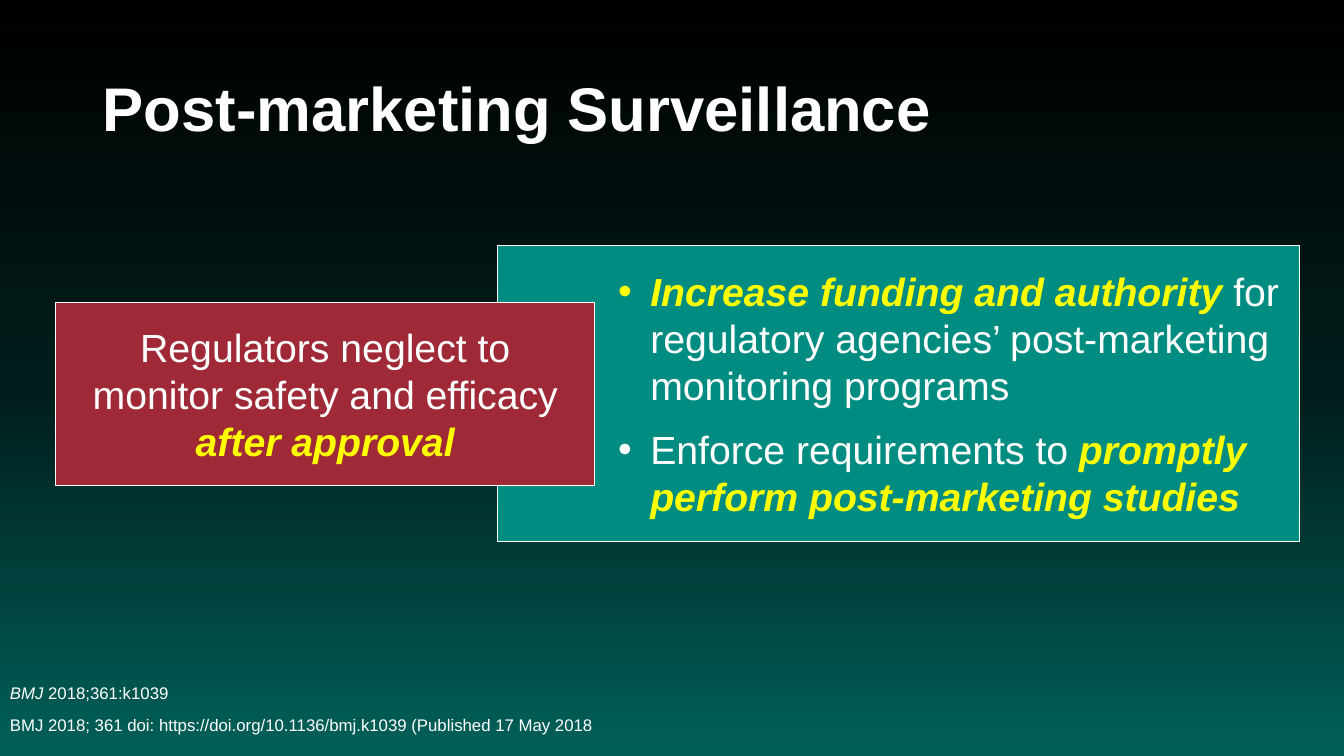
from copy import deepcopy

from lxml.etree import SubElement
from pptx import Presentation
from pptx.dml.color import RGBColor
from pptx.enum.shapes import MSO_SHAPE
from pptx.enum.text import MSO_ANCHOR, PP_ALIGN
from pptx.oxml.ns import qn
from pptx.util import Inches, Pt

COLORS = {"white": "FFFFFF", "yellow": "FFFF00", "teal": "008C81", "red": "9F2936"}
GRADIENT = [(0, "000000"), (0.52, "001E1C"), (1, "006059")]
FONT = "Arial"
STRONG = {"color": "yellow", "bold": True, "italic": True}


def rgb(name):
    return RGBColor.from_string(COLORS[name])


def set_background(s):
    fill = s.background.fill
    fill.gradient()
    fill.gradient_angle = 270
    stop_list = next(s.element.iter(qn("a:gsLst")))
    stop_list.append(deepcopy(stop_list[-1]))
    for stop, (position, color) in zip(fill.gradient_stops, GRADIENT):
        stop.position = position
        stop.color.rgb = RGBColor.from_string(color)


def add_bullet(p, indent):
    pPr = p._p.get_or_add_pPr()
    pPr.set("marL", str(Inches(indent)))
    pPr.set("indent", str(-Inches(indent)))
    SubElement(pPr, qn("a:buFont"), typeface=FONT)
    SubElement(pPr, qn("a:buChar"), char="•")


def add_run(p, text, size, color="white", bold=False, italic=False):
    r = p.add_run()
    r.text = text
    r.font.name = FONT
    r.font.size = Pt(size)
    r.font.bold = bold
    r.font.italic = italic
    r.font.color.rgb = rgb(color)


def write(sp, paragraphs, size, margins=(0.1, 0.05, 0.1, 0.05), align=PP_ALIGN.LEFT,
          line=1, before=0, after=0, bullet=0):
    """Fill a shape; each paragraph is a list of (text, run format) pairs."""
    tf = sp.text_frame
    tf.word_wrap = True
    tf.vertical_anchor = MSO_ANCHOR.MIDDLE
    tf.margin_left, tf.margin_top, tf.margin_right, tf.margin_bottom = map(Inches, margins)
    for i, runs in enumerate(paragraphs):
        p = tf.add_paragraph() if i else tf.paragraphs[0]
        p.alignment = align
        p.line_spacing = line
        p.space_before = Pt(before if i else 0)
        p.space_after = Pt(after)
        if bullet:
            add_bullet(p, bullet)
        for text, style in runs:
            add_run(p, text, size, **style)


def add_text(s, box, paragraphs, size, **layout):
    write(s.shapes.add_textbox(*map(Inches, box)), paragraphs, size, **layout)


def add_panel(s, box, color, paragraphs, **layout):
    sp = s.shapes.add_shape(MSO_SHAPE.RECTANGLE, *map(Inches, box))
    sp.shadow.inherit = False
    sp.fill.solid()
    sp.fill.fore_color.rgb = rgb(color)
    sp.line.color.rgb = rgb("white")
    sp.line.width = Pt(0.75)
    write(sp, paragraphs, 28, **layout)


def main():
    prs = Presentation()
    prs.slide_width, prs.slide_height = Inches(13.33), Inches(7.5)
    s = prs.slides.add_slide(prs.slide_layouts[6])
    set_background(s)

    add_text(s, (0.92, 0.4, 11.5, 1.45),
             [[("Post-marketing Surveillance", {"bold": True})]], 44, line=0.8)
    add_text(s, (0, 6.58, 9, 0.92), [
        [("BMJ", {"italic": True}), (" 2018;361:k1039", {})],
        [("BMJ 2018; 361 doi: https://doi.org/10.1136/bmj.k1039 (Published 17 May 2018", {})],
    ], 12, line=0.9, before=10)

    add_panel(s, (4.93, 2.44, 7.96, 2.93), "teal", [
        [("Increase funding and authority ", STRONG),
         ("for regulatory agencies’ post-marketing monitoring programs", {})],
        [("Enforce requirements to ", {}),
         ("promptly perform post-marketing studies", STRONG)],
    ], margins=(1.2, 0.2, 0.2, 0.2), after=12, bullet=0.32)
    add_panel(s, (0.55, 3, 5.35, 1.82), "red", [
        [("Regulators neglect to monitor safety and efficacy ", {}),
         ("after approval", STRONG)],
    ], margins=(0.2,) * 4, align=PP_ALIGN.CENTER)

    prs.save("out.pptx")


if __name__ == "__main__":
    main()
